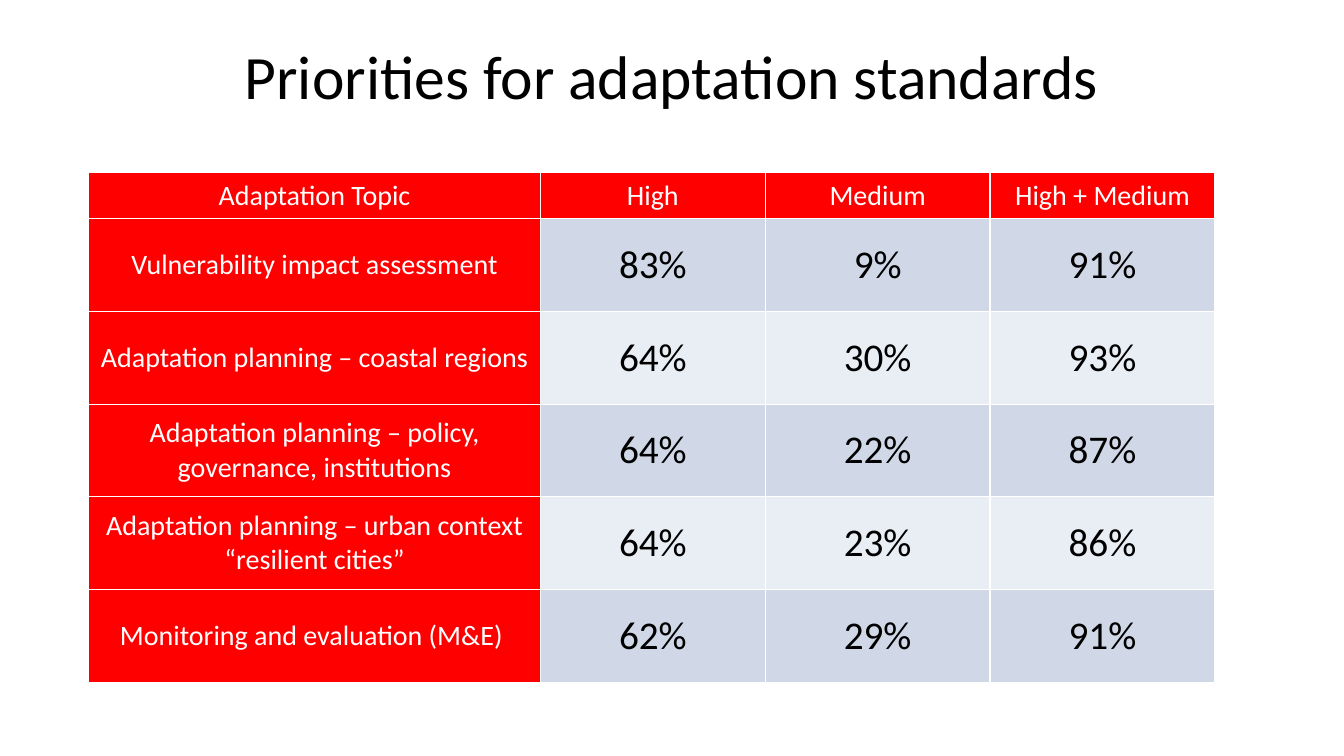
from dataclasses import dataclass

from lxml import etree
from pptx import Presentation
from pptx.dml.color import RGBColor
from pptx.enum import text as txt
from pptx.oxml import ns
from pptx.util import Inches, Pt


@dataclass(frozen=True)
class Theme:
    font: str = "Calibri"
    title_size: int = 44
    label_size: int = 20
    value_size: int = 28
    dark: str = "000000"
    light: str = "FFFFFF"
    accent: str = "FF0000"
    bands: tuple[str, str] = ("D0D8E8", "E9EDF4")
    border_width: int = 1


@dataclass(frozen=True)
class Priority:
    topic: str
    high: int
    medium: int
    combined: int


THEME = Theme()
HEADINGS = ("Adaptation Topic", "High", "Medium", "High + Medium")
PRIORITIES = (
    Priority("Vulnerability impact assessment", 83, 9, 91),
    Priority("Adaptation planning – coastal regions", 64, 30, 93),
    Priority("Adaptation planning – policy, governance, institutions", 64, 22, 87),
    Priority("Adaptation planning – urban context “resilient cities”", 64, 23, 86),
    Priority("Monitoring and evaluation (M&E) ", 62, 29, 91),
)
TOPIC_WIDTH, RATING_WIDTH = 4.48, 2.23
HEADING_HEIGHT, PRIORITY_HEIGHT = 0.46, 0.92


def write(frame, content: str, *, size: int, color: str) -> None:
    frame.word_wrap = True
    paragraph = frame.paragraphs[0]
    paragraph.alignment = txt.PP_ALIGN.CENTER
    run = paragraph.add_run()
    run.text = content
    run.font.name = THEME.font
    run.font.size = Pt(size)
    run.font.bold = False
    run.font.color.rgb = RGBColor.from_string(color)


def add_borders(cell) -> None:
    properties = cell._tc.get_or_add_tcPr()
    for side in ("a:lnL", "a:lnR", "a:lnT", "a:lnB"):
        line = etree.SubElement(properties, ns.qn(side), w=str(Pt(THEME.border_width)))
        fill = etree.SubElement(line, ns.qn("a:solidFill"))
        etree.SubElement(fill, ns.qn("a:srgbClr"), val=THEME.light)


def fill_cell(cell, content: str, *, fill: str, size: int, color: str) -> None:
    cell.margin_left = cell.margin_right = Inches(0.1)
    cell.margin_top = cell.margin_bottom = 0
    cell.vertical_anchor = txt.MSO_ANCHOR.MIDDLE
    add_borders(cell)
    cell.fill.solid()
    cell.fill.fore_color.rgb = RGBColor.from_string(fill)
    write(cell.text_frame, content, size=size, color=color)


def add_title(slide) -> None:
    title = slide.shapes.add_textbox(
        Inches(0.83), Inches(0.27), Inches(11.67), Inches(0.95)
    )
    title.text_frame.vertical_anchor = txt.MSO_ANCHOR.MIDDLE
    write(
        title.text_frame,
        "Priorities for adaptation standards",
        size=THEME.title_size,
        color=THEME.dark,
    )


def add_priorities(slide) -> None:
    widths = [TOPIC_WIDTH] + [RATING_WIDTH] * (len(HEADINGS) - 1)
    heights = [HEADING_HEIGHT] + [PRIORITY_HEIGHT] * len(PRIORITIES)
    priorities = slide.shapes.add_table(
        len(heights),
        len(widths),
        Inches(0.88),
        Inches(1.71),
        Inches(sum(widths)),
        Inches(sum(heights)),
    ).table
    priorities.first_row = priorities.horz_banding = False
    for column, width in zip(priorities.columns, widths):
        column.width = Inches(width)
    for row, height in zip(priorities.rows, heights):
        row.height = Inches(height)

    label = dict(fill=THEME.accent, size=THEME.label_size, color=THEME.light)
    for column, heading in enumerate(HEADINGS):
        fill_cell(priorities.cell(0, column), heading, **label)
    for row, priority in enumerate(PRIORITIES, start=1):
        fill_cell(priorities.cell(row, 0), priority.topic, **label)
        ratings = (priority.high, priority.medium, priority.combined)
        for column, rating in enumerate(ratings, start=1):
            fill_cell(
                priorities.cell(row, column),
                f"{rating}%",
                fill=THEME.bands[(row - 1) % 2],
                size=THEME.value_size,
                color=THEME.dark,
            )


def main() -> None:
    deck = Presentation()
    deck.slide_width = Inches(13.33)
    deck.slide_height = Inches(7.5)
    slide = deck.slides.add_slide(deck.slide_layouts[6])
    add_title(slide)
    add_priorities(slide)
    deck.save("out.pptx")


if __name__ == "__main__":
    main()
